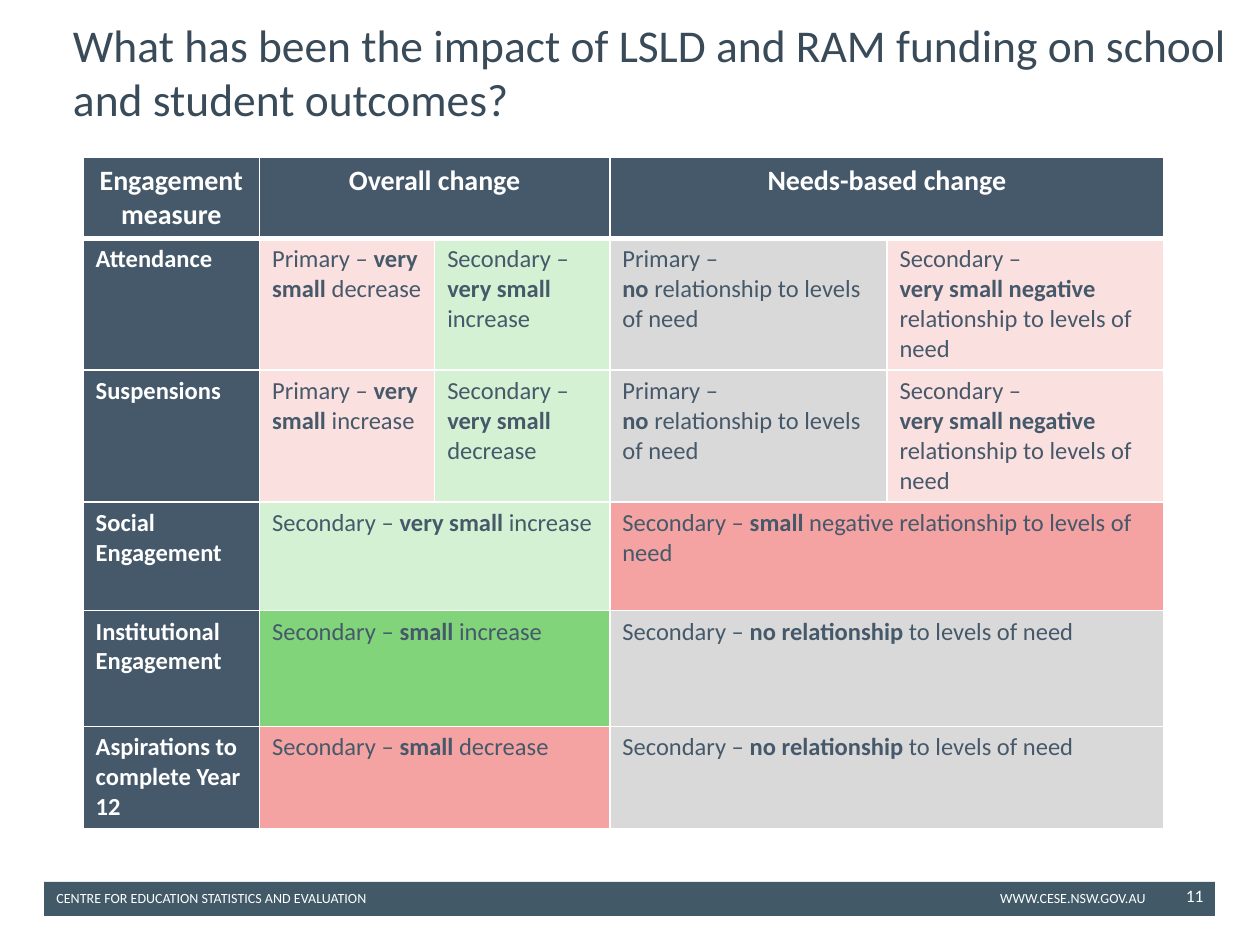
"""Build the slide on engagement outcomes of school funding."""
from dataclasses import dataclass

from lxml import etree
from pptx import Presentation
from pptx import util as u
from pptx.dml.color import RGBColor
from pptx.enum import shapes, text
from pptx.oxml import ns

COLOURS = {
    "white": "FFFFFF", "bar": "425968", "title": "394A59", "slate": "46596A",
    "pale red": "FBE0E0", "red": "F4A3A2", "pale green": "D5F1D3",
    "green": "82D47A", "grey": "D9D9D9",
}
FONT = "Calibri"
COLUMN_WIDTHS = (100.8, 100.08, 100.08, 158.4, 158.4)
ROW_HEIGHTS = (45.36, 75.2, 75.2, 61.92, 66.24, 57.6)


@dataclass(frozen=True)
class Label:
    words: str
    left: float
    top: float
    width: float
    height: float
    size: float
    colour: str = "white"
    align: text.PP_ALIGN = text.PP_ALIGN.LEFT
    anchor: text.MSO_ANCHOR = text.MSO_ANCHOR.TOP


@dataclass(frozen=True)
class Finding:
    words: str
    fill: str
    columns: int = 1


@dataclass(frozen=True)
class Measure:
    name: str
    findings: tuple[Finding, ...]


LABELS = (
    Label("CENTRE FOR EDUCATION STATISTICS AND EVALUATION", 25.2, 504.9, 249.8, 17, 8),
    Label("WWW.CESE.NSW.GOV.AU", 564.5, 504.9, 105.8, 17, 8),
    Label("What has been the impact of LSLD and RAM funding on school and student outcomes?",
          34.6, 12.2, 684.7, 56.9, 26, "title", anchor=text.MSO_ANCHOR.MIDDLE),
    Label("11", 665.3, 497.5, 29.5, 28.8, 10,
          align=text.PP_ALIGN.RIGHT, anchor=text.MSO_ANCHOR.MIDDLE),
)
NEEDS_BY_LEVEL = (
    Finding("Primary – \n**no **relationship to levels of need", "grey"),
    Finding("Secondary – \n**very small negative **relationship to levels of need", "pale red"),
)
NO_RELATIONSHIP = Finding("Secondary – **no relationship** to levels of need", "grey", 2)
HEADINGS = (
    Finding("**Engagement measure**", "slate"),
    Finding("**Overall change**", "slate", 2),
    Finding("**Needs-based change**", "slate", 2),
)
MEASURES = (
    Measure("Attendance", (
        Finding("Primary – **very small** decrease", "pale red"),
        Finding("Secondary – **very small **increase", "pale green"),
        *NEEDS_BY_LEVEL)),
    Measure("Suspensions", (
        Finding("Primary – **very small** increase", "pale red"),
        Finding("Secondary – **very small **decrease", "pale green"),
        *NEEDS_BY_LEVEL)),
    Measure("Social Engagement", (
        Finding("Secondary – **very small **increase", "pale green", 2),
        Finding("Secondary – **small** negative relationship to levels of need", "red", 2))),
    Measure("Institutional Engagement", (
        Finding("Secondary – **small** increase", "green", 2), NO_RELATIONSHIP)),
    Measure("Aspirations to complete Year 12", (
        Finding("Secondary – **small** decrease", "red", 2), NO_RELATIONSHIP)),
)


def rgb(name: str) -> RGBColor:
    """Return the named colour."""
    return RGBColor.from_string(COLOURS[name])


def add_runs(paragraph, words: str, size: float, colour: str) -> None:
    """Add runs, with bold between double asterisks and breaks at newlines."""
    for index, part in enumerate(words.split("**")):
        for line_number, line in enumerate(part.split("\n")):
            if line_number:
                paragraph.add_line_break()
                line_break = paragraph._p.findall(ns.qn("a:br"))[-1]
                etree.SubElement(line_break, ns.qn("a:rPr"), sz=str(int(size * 100)))
            if line:
                run = paragraph.add_run()
                run.text = line
                run.font.name = FONT
                run.font.size = u.Pt(size)
                run.font.bold = index % 2 == 1
                run.font.color.rgb = rgb(colour)


def add_label(slide, label: Label) -> None:
    """Add a wrapped text box."""
    box = slide.shapes.add_textbox(
        u.Pt(label.left), u.Pt(label.top), u.Pt(label.width), u.Pt(label.height))
    frame = box.text_frame
    frame.word_wrap = True
    frame.vertical_anchor = label.anchor
    paragraph = frame.paragraphs[0]
    paragraph.alignment = label.align
    add_runs(paragraph, label.words, label.size, label.colour)


def style_cell(cell, fill: str, top: float, bottom: float) -> None:
    """Fill a cell and give it white borders."""
    cell.fill.solid()
    cell.fill.fore_color.rgb = rgb(fill)
    properties = cell._tc.get_or_add_tcPr()
    for index, (side, width) in enumerate((("L", 1), ("R", 1), ("T", top), ("B", bottom))):
        line = etree.Element(ns.qn(f"a:ln{side}"), w=str(u.Pt(width)))
        solid = etree.SubElement(line, ns.qn("a:solidFill"))
        etree.SubElement(solid, ns.qn("a:srgbClr"), val=COLOURS["white"])
        properties.insert(index, line)


def fill_row(table, row: int, findings: tuple[Finding, ...]) -> None:
    """Write one table row, merging cells where a finding spans columns."""
    column = 0
    for finding in findings:
        last = column + finding.columns - 1
        cell = table.cell(row, column)
        if finding.columns > 1:
            cell.merge(table.cell(row, last))
        for position in range(column, last + 1):
            style_cell(table.cell(row, position), finding.fill,
                       3 if row == 1 else 1, 3 if row == 0 else 1)
        paragraph = cell.text_frame.paragraphs[0]
        paragraph.alignment = text.PP_ALIGN.LEFT if row else text.PP_ALIGN.CENTER
        add_runs(paragraph, finding.words, 14 if row else 16,
                 "white" if finding.fill == "slate" else "slate")
        column = last + 1


def add_findings_table(slide) -> None:
    """Add the table of engagement measures."""
    frame = slide.shapes.add_table(
        len(ROW_HEIGHTS), len(COLUMN_WIDTHS), u.Pt(47.52), u.Pt(89.8),
        u.Pt(sum(COLUMN_WIDTHS)), u.Pt(sum(ROW_HEIGHTS)))
    table = frame.table
    for column, width in zip(table.columns, COLUMN_WIDTHS):
        column.width = u.Pt(width)
    for row, height in zip(table.rows, ROW_HEIGHTS):
        row.height = u.Pt(height)
    fill_row(table, 0, HEADINGS)
    for number, measure in enumerate(MEASURES, 1):
        name = Finding(f"**{measure.name}**", "slate")
        fill_row(table, number, (name, *measure.findings))


def add_footer_bar(slide) -> None:
    """Add the bar behind the footer text."""
    bar = slide.shapes.add_shape(
        shapes.MSO_SHAPE.RECTANGLE, u.Pt(25.2), u.Pt(504), u.Pt(669), u.Pt(19.4))
    bar.shadow.inherit = False
    bar.fill.solid()
    bar.fill.fore_color.rgb = rgb("bar")
    bar.line.fill.background()


def main() -> None:
    """Build and save the presentation."""
    presentation = Presentation()
    presentation.slide_width, presentation.slide_height = u.Pt(720), u.Pt(540)
    slide = presentation.slides.add_slide(presentation.slide_layouts[6])
    add_footer_bar(slide)
    add_findings_table(slide)
    for label in LABELS:
        add_label(slide, label)
    presentation.save("out.pptx")


if __name__ == "__main__":
    main()
